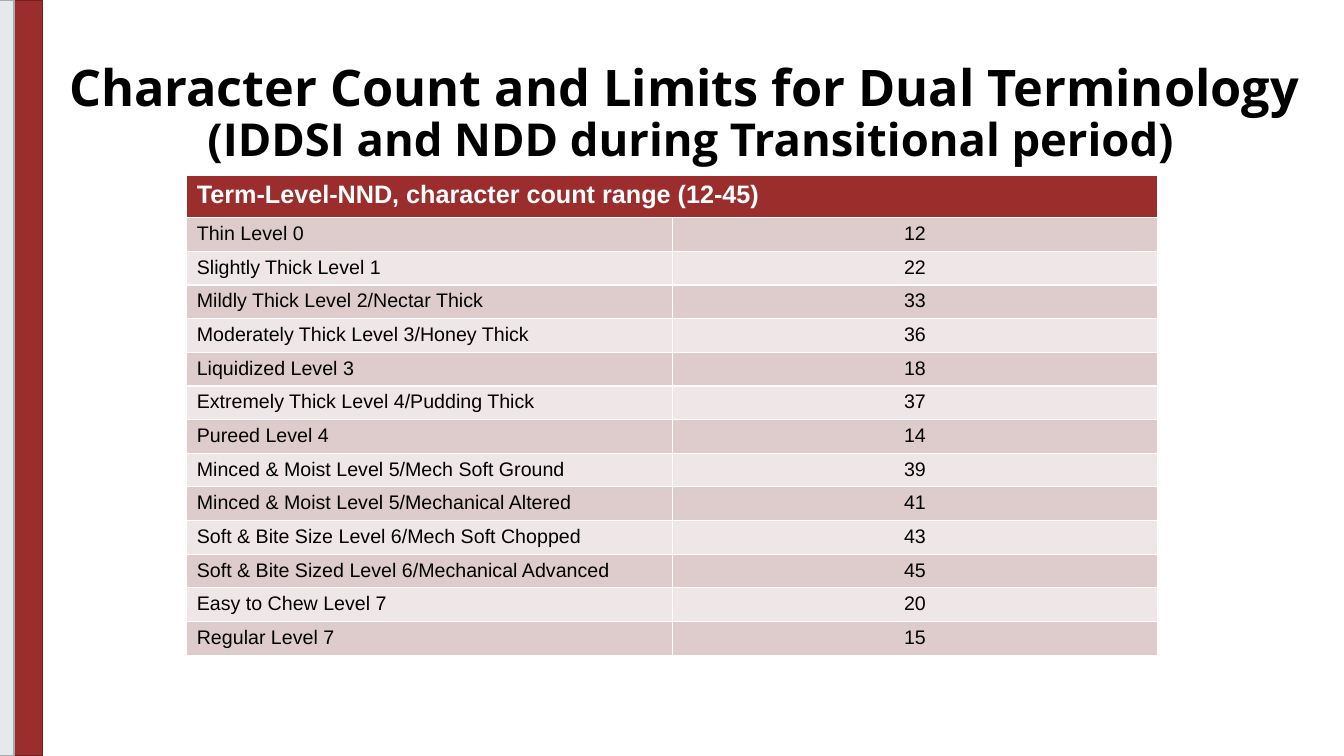
from pptx import Presentation
from pptx.dml.color import RGBColor
from pptx.enum import shapes, text
from pptx.util import Pt

TITLE = (
    ("Character Count and Limits for Dual Terminology ", 36),
    ("(IDDSI and NDD during Transitional period)", 32.4),
)
HEADING = "Term-Level-NND, character count range (12-45)"
TERMS = [
    ("Thin Level 0", 12),
    ("Slightly Thick Level 1", 22),
    ("Mildly Thick Level 2/Nectar Thick", 33),
    ("Moderately Thick Level 3/Honey Thick", 36),
    ("Liquidized Level 3", 18),
    ("Extremely Thick Level 4/Pudding Thick", 37),
    ("Pureed Level 4", 14),
    ("Minced & Moist Level 5/Mech Soft Ground", 39),
    ("Minced & Moist Level 5/Mechanical Altered", 41),
    ("Soft & Bite Size Level 6/Mech Soft Chopped", 43),
    ("Soft & Bite Sized Level 6/Mechanical Advanced", 45),
    ("Easy to Chew Level 7", 20),
    ("Regular Level 7", 15),
]
# left, width, fill, line
STRIPES = [(0, 30.4, "9B2D2D", "712020"), (-2, 12, "E5E9EC", "A7AAAC")]
BANDS = ("DECCCC", "EFE7E7")
PAGE_WIDTH, PAGE_HEIGHT = 960, 540
COLUMN_WIDTH, HEADING_HEIGHT, ROW_HEIGHT = 346.8, 30, 23.15


def color(value):
    return RGBColor.from_string(value)


def style_font(font, name, size, value, bold):
    font.name, font.size, font.bold = name, Pt(size), bold
    font.color.rgb = color(value)


def add_stripe(page, left, width, fill, line):
    stripe = page.shapes.add_shape(
        shapes.MSO_SHAPE.RECTANGLE, Pt(left), 0, Pt(width), Pt(PAGE_HEIGHT))
    stripe.shadow.inherit = False
    stripe.fill.solid()
    stripe.fill.fore_color.rgb = color(fill)
    stripe.line.color.rgb = color(line)
    stripe.line.width = Pt(1)


def add_title(page):
    box = page.shapes.add_textbox(Pt(27), Pt(29.5), Pt(933), Pt(104.4))
    frame = box.text_frame
    frame.word_wrap = True
    frame.vertical_anchor = text.MSO_ANCHOR.MIDDLE
    para = frame.paragraphs[0]
    para.text = "\v".join(line for line, size in TITLE)
    para.alignment = text.PP_ALIGN.CENTER
    para.line_spacing = 0.9
    for span, (line, size) in zip(para.runs, TITLE):
        style_font(span.font, "Open Sans", size, "000000", True)


def fill_cell(cell, words, fill, size, ink="000000", bold=False, align=text.PP_ALIGN.LEFT):
    cell.fill.solid()
    cell.fill.fore_color.rgb = color(fill)
    cell.text_frame.text = words
    para = cell.text_frame.paragraphs[0]
    para.alignment = align
    style_font(para.runs[0].font, "Arial", size, ink, bold)


def add_term_table(page):
    height = HEADING_HEIGHT + ROW_HEIGHT * len(TERMS)
    table = page.shapes.add_table(
        len(TERMS) + 1, 2, Pt(133.4), Pt(125.5), Pt(2 * COLUMN_WIDTH), Pt(height)).table
    for column in table.columns:
        column.width = Pt(COLUMN_WIDTH)
    for row in table.rows:
        row.height = Pt(ROW_HEIGHT)
    table.rows[0].height = Pt(HEADING_HEIGHT)
    table.cell(0, 0).merge(table.cell(0, 1))
    fill_cell(table.cell(0, 0), HEADING, "9B2D2D", 18, "FFFFFF", True)
    for index, (term, count) in enumerate(TERMS):
        band = BANDS[index % 2]
        fill_cell(table.cell(index + 1, 0), term, band, 14)
        fill_cell(table.cell(index + 1, 1), str(count), band, 14, align=text.PP_ALIGN.CENTER)


def main():
    deck = Presentation()
    deck.slide_width, deck.slide_height = Pt(PAGE_WIDTH), Pt(PAGE_HEIGHT)
    page = deck.slides.add_slide(deck.slide_layouts[6])
    for stripe in STRIPES:
        add_stripe(page, *stripe)
    add_title(page)
    add_term_table(page)
    deck.save("out.pptx")


if __name__ == "__main__":
    main()
